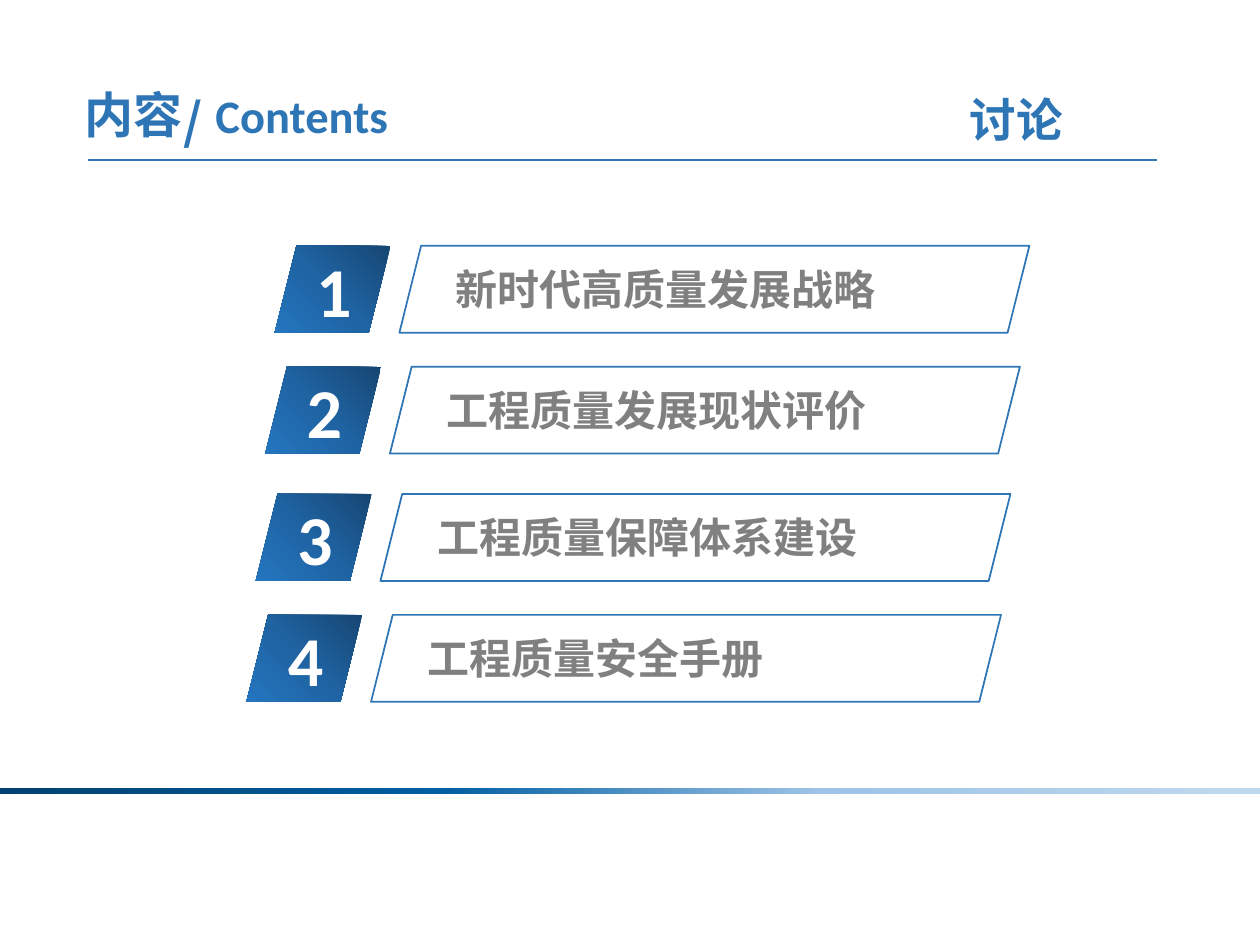
from lxml.etree import SubElement
from pptx import Presentation
from pptx.dml.color import RGBColor
from pptx.enum.shapes import MSO_CONNECTOR, MSO_SHAPE as Shape
from pptx.enum.text import MSO_ANCHOR as Anchor, PP_ALIGN as Align
from pptx.oxml.ns import qn
from pptx.util import Inches, Pt

WIDTH, HEIGHT = 10, 7.5
LATIN, CHINESE = "Calibri", "Noto Sans CJK SC"
BLUE, GREY, WHITE = "2E75B6", "808080", "FFFFFF"
TILE_BLUES = [(0, "164672"), (50, "1F63A2"), (100, "2476C0")]
BAR_BLUES = [(0, "004272"), (35, "005EA2"), (65, "9DC3E6"), (98, "BDD7EE")]

HEADING = [("内容\t", 28, CHINESE), ("Contents", 26.6, LATIN)]
HEADING_TAB = 1.04
TOPICS = [  # top of the row, topic
    (1.95, "新时代高质量发展战略"),
    (2.91, "工程质量发展现状评价"),
    (3.92, "工程质量保障体系建设"),
    (4.88, "工程质量安全手册"),
]
FIRST_LEFT, SLANT_STEP, ROW_HEIGHT = 2.18, 0.075, 0.69


def color(hex_value):
    return RGBColor.from_string(hex_value)


def box(left, top, width, height):
    return [Inches(length) for length in (left, top, width, height)]


def write(holder, runs, ink=BLUE, align=Align.LEFT, anchor=Anchor.TOP):
    """Fill a shape with one bold paragraph of (text, size, font) runs."""
    frame = holder.text_frame
    frame.word_wrap = True
    frame.vertical_anchor = anchor
    paragraph = frame.paragraphs[0]
    paragraph.alignment = align
    for text, size, face in runs:
        run = paragraph.add_run()
        run.text = text
        font = run.font
        font.size, font.bold, font.name = Pt(size), True, face
        font.color.rgb = color(ink)
        SubElement(font._element, qn("a:ea"), typeface=CHINESE)
    return paragraph


def add_text(shapes, place, text, size, face=CHINESE, ink=BLUE):
    write(shapes.add_textbox(*box(*place)), [(text, size, face)], ink)


def add_plain(shapes, kind, place, outline=None):
    """Add a preset shape without fill or shadow, outlined on request."""
    shape = shapes.add_shape(kind, *box(*place))
    shape.shadow.inherit = False
    shape.fill.background()
    if outline:
        shape.line.color.rgb = color(outline)
        shape.line.width = Pt(1)
    else:
        shape.line.fill.background()
    return shape


def shade(shape, stops, angle):
    """Apply a linear gradient; the angle runs clockwise in degrees."""
    shape.fill.gradient()
    gradient = shape._element.spPr.find(qn("a:gradFill"))
    for child in list(gradient):
        gradient.remove(child)
    stop_list = SubElement(gradient, qn("a:gsLst"))
    for position, hex_value in stops:
        stop = SubElement(stop_list, qn("a:gs"), pos=str(position * 1000))
        SubElement(stop, qn("a:srgbClr"), val=hex_value)
    SubElement(gradient, qn("a:lin"), ang=str(angle * 60000), scaled="0")


def add_topic(slide, index, top, topic):
    left = FIRST_LEFT - index * SLANT_STEP
    row = slide.shapes.add_group_shape().shapes
    tile = add_plain(row, Shape.PARALLELOGRAM, (left, top, 0.92, ROW_HEIGHT))
    shade(tile, TILE_BLUES, 135)
    add_text(row, (left + 1.34, top + 0.09, 4.32, 0.5), topic, 24, ink=GREY)
    number = add_plain(row, Shape.PARALLELOGRAM, (left - 0.05, top - 0.27, 1.04, 1.23))
    write(number, [(str(index + 1), 40, LATIN)], WHITE, Align.CENTER, Anchor.MIDDLE)
    add_plain(row, Shape.PARALLELOGRAM, (left + 0.99, top, 5, ROW_HEIGHT), BLUE)


def add_header(slide):
    title = slide.shapes.title
    title.left, title.top, title.width, title.height = box(0.57, 0.62, 2.68, 0.57)
    properties = write(title, HEADING)._p.get_or_add_pPr()
    tabs = SubElement(properties, qn("a:tabLst"))
    SubElement(tabs, qn("a:tab"), pos=str(Inches(HEADING_TAB)), algn="l")
    add_text(slide.shapes, (1.36, 0.67, 0.44, 0.57), "/", 28)
    add_text(slide.shapes, (7.6, 0.67, 1.73, 0.54), "讨论", 26.6, LATIN)
    rule = slide.shapes.add_connector(MSO_CONNECTOR.STRAIGHT, *box(0.7, 1.27, 9.18, 1.27))
    rule.line.color.rgb = color(BLUE)
    rule.line.width = Pt(0.75)
    SubElement(rule._element.spPr, qn("a:effectLst"))


def main():
    deck = Presentation()
    deck.slide_width, deck.slide_height = Inches(WIDTH), Inches(HEIGHT)
    slide = deck.slides.add_slide(deck.slide_layouts[5])
    bar = add_plain(slide.shapes, Shape.RECTANGLE, (0, HEIGHT * 5 / 6, WIDTH, 0.05))
    shade(bar, BAR_BLUES, 0)
    for index, (top, topic) in enumerate(TOPICS):
        add_topic(slide, index, top, topic)
    add_header(slide)
    deck.save("out.pptx")


if __name__ == "__main__":
    main()
